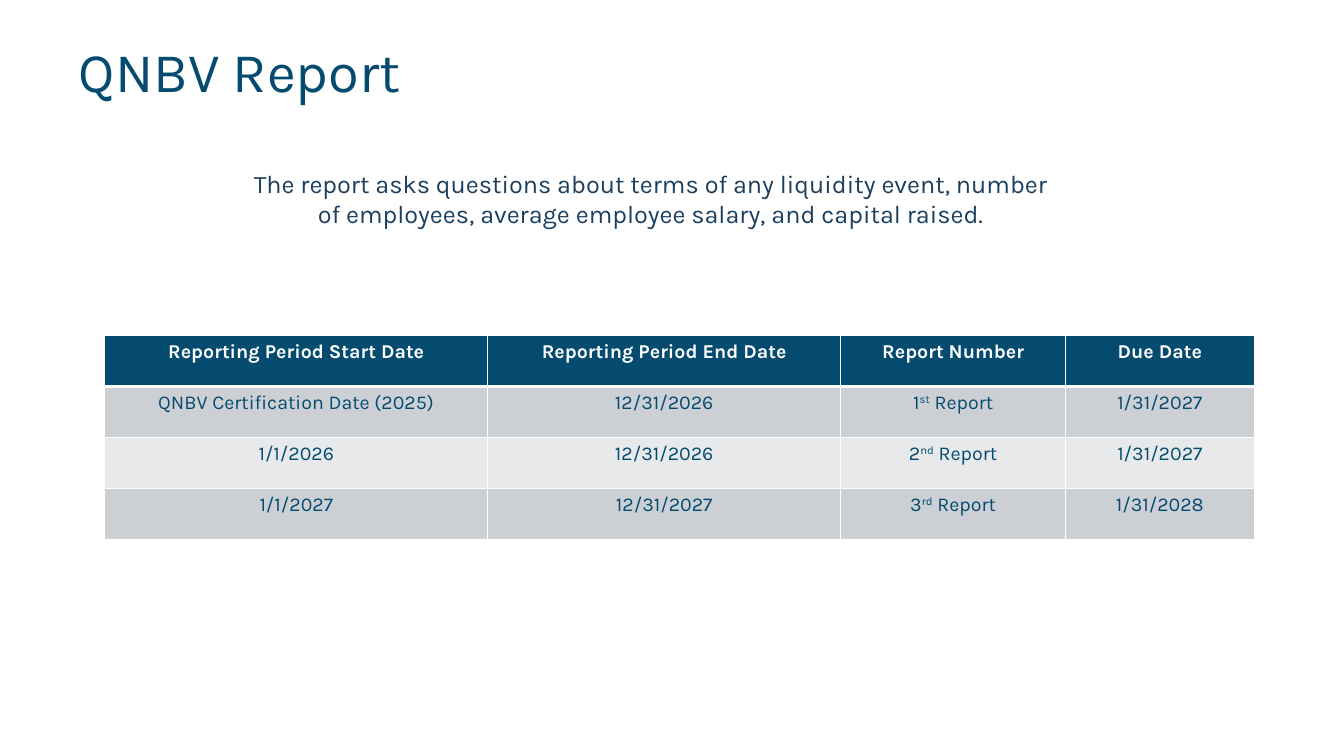
import pptx
import pptx.util
import pptx.dml.color
import pptx.enum.text
import pptx.oxml
import pptx.oxml.ns

RGB = pptx.dml.color.RGBColor
TEAL = RGB(0x04, 0x4B, 0x6F)
NAVY = RGB(0x1A, 0x3F, 0x5F)
WHITE = RGB(0xFF, 0xFF, 0xFF)
GREY = RGB(0xCC, 0xD0, 0xD5)
PALE = RGB(0xE7, 0xE9, 0xEB)
ALIGN = pptx.enum.text.PP_ALIGN
FIT = pptx.enum.text.MSO_AUTO_SIZE
ANCHOR = pptx.enum.text.MSO_ANCHOR

WIDTHS = [28.5, 26.26, 16.73, 14.03]
ROWS = [
    ["Reporting Period Start Date", "Reporting Period End Date", "Report Number", "Due Date"],
    ["QNBV Certification Date (2025)", "12/31/2026", "1^st^ Report", "1/31/2027"],
    ["1/1/2026", "12/31/2026", "2^nd^ Report", "1/31/2027"],
    ["1/1/2027", "12/31/2027", "3^rd^ Report", "1/31/2028"],
]


class Deck:
    """Holds the style and the current slide; lengths are percents of its size."""

    font = "Karla"

    def __init__(self):
        self.prs = pptx.Presentation()
        self.prs.slide_width = pptx.util.Inches(13.33)
        self.prs.slide_height = pptx.util.Inches(7.5)
        self.slide = self.prs.slides.add_slide(self.prs.slide_layouts[5])

    def across(self, share):
        return round(self.prs.slide_width * share / 100)

    def down(self, share):
        return round(self.prs.slide_height * share / 100)

    def area(self, left, top, width, height):
        return self.across(left), self.down(top), self.across(width), self.down(height)

    def runs(self, para, text, size, color, bold=False, align=ALIGN.CENTER):
        para.alignment = align
        for i, part in enumerate(text.split("^")):
            run = para.add_run()
            run.text = part
            run.font.name = self.font
            run.font.size = pptx.util.Pt(size)
            run.font.bold = bold
            run.font.color.rgb = color
            if i % 2:
                run._r.get_or_add_rPr().set("baseline", "30000")

    def title(self, text, *box):
        shape = self.slide.shapes.title
        shape.left, shape.top, shape.width, shape.height = self.area(*box)
        frame = shape.text_frame
        frame.auto_size = FIT.NONE
        frame.vertical_anchor = ANCHOR.BOTTOM
        frame.paragraphs[0].line_spacing = 0.9
        self.runs(frame.paragraphs[0], text, 40, TEAL, align=ALIGN.LEFT)

    def text(self, text, *box):
        frame = self.slide.shapes.add_textbox(*self.area(*box)).text_frame
        frame.word_wrap = True
        frame.auto_size = FIT.SHAPE_TO_FIT_TEXT
        self.runs(frame.paragraphs[0], text, 18, NAVY)

    def border(self, cell, **sides):
        for side, width in sides.items():
            cell._tc.get_or_add_tcPr().append(pptx.oxml.parse_xml(
                f'<a:ln{side} {pptx.oxml.ns.nsdecls("a")} w="{pptx.util.Pt(width)}">'
                f'<a:solidFill><a:srgbClr val="{WHITE}"/></a:solidFill></a:ln{side}>'))

    def table(self, rows, widths, left, top, height):
        box = self.area(left, top, sum(widths), height)
        grid = self.slide.shapes.add_table(len(rows), len(widths), *box).table
        for col, width in zip(grid.columns, widths):
            col.width = self.across(width)
        for r, row in enumerate(rows):
            head = r == 0
            fill = TEAL if head else GREY if r % 2 else PALE
            for c, text in enumerate(row):
                cell = grid.cell(r, c)
                self.border(cell, L=1, R=1, T=3 if r == 1 else 1, B=3 if head else 1)
                cell.fill.solid()
                cell.fill.fore_color.rgb = fill
                self.runs(cell.text_frame.paragraphs[0], text, 14,
                          WHITE if head else TEAL, head)


def main():
    deck = Deck()
    deck.title("QNBV Report", 5.1, 7.33, 89.87, 7.2)
    deck.table(ROWS, WIDTHS, 7.8, 44.4, 26.93)
    deck.text("The report asks questions about terms of any liquidity event, number of "
              "employees, average employee salary, and capital raised.",
              17.4, 21.6, 62.04, 9.47)
    deck.prs.save("out.pptx")


if __name__ == "__main__":
    main()
